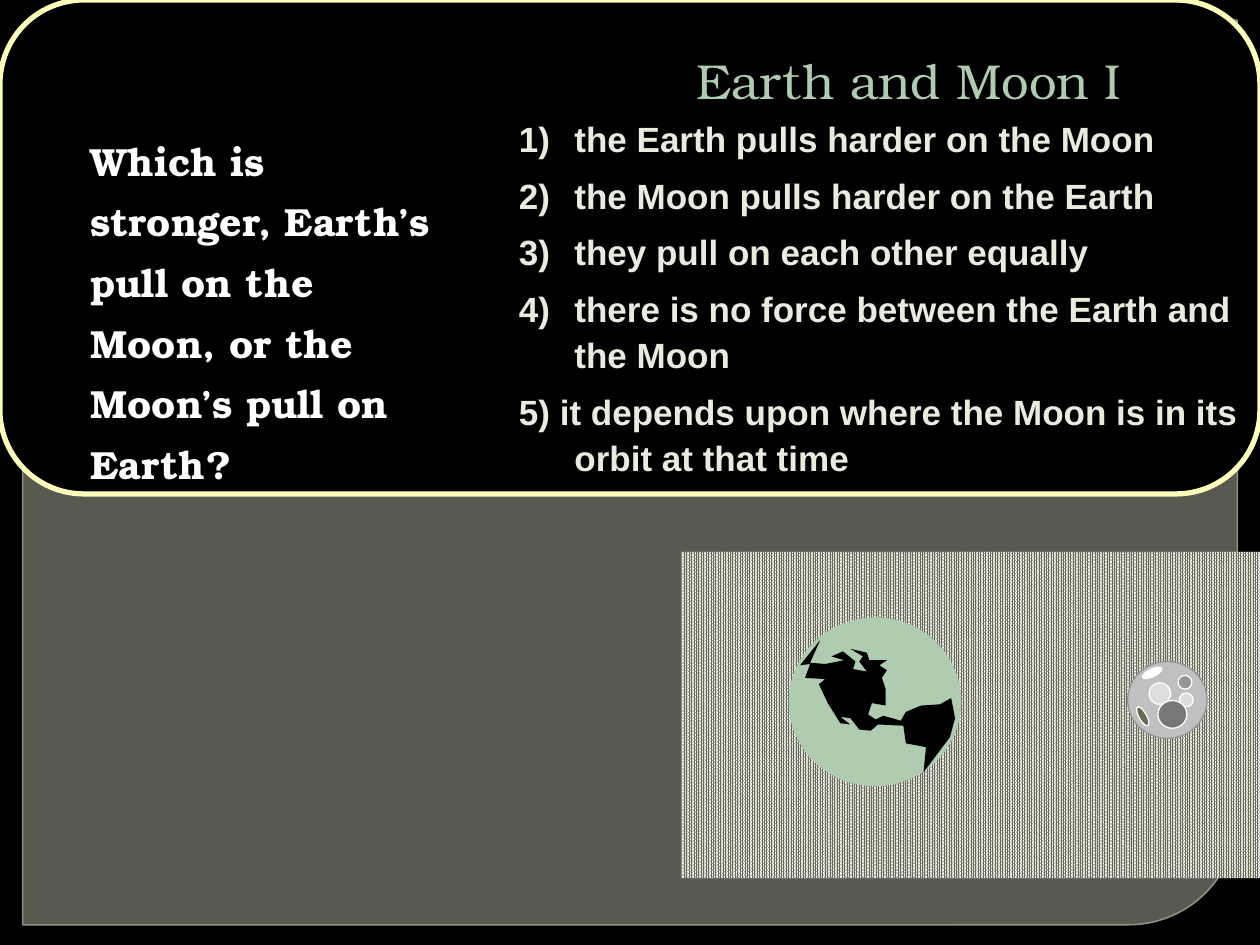
from dataclasses import dataclass

from lxml import etree
from pptx import Presentation
from pptx.dml.color import RGBColor
from pptx.enum.dml import MSO_PATTERN
from pptx.enum.shapes import MSO_SHAPE
from pptx.enum.text import MSO_ANCHOR, MSO_AUTO_SIZE, PP_ALIGN
from pptx.oxml.ns import qn
from pptx.util import Pt

PX = 9144
ELLIPSE = MSO_SHAPE.OVAL
RECTANGLE = MSO_SHAPE.RECTANGLE
ROUNDED = MSO_SHAPE.ROUNDED_RECTANGLE
DIAGONAL = MSO_SHAPE.ROUND_2_DIAG_RECTANGLE
DENSE = MSO_PATTERN.PERCENT_90
LEFT, RIGHT = PP_ALIGN.LEFT, PP_ALIGN.RIGHT
TOP, BOTTOM = MSO_ANCHOR.TOP, MSO_ANCHOR.BOTTOM
NO_FIT = MSO_AUTO_SIZE.NONE

SERIF, SANS = "TeX Gyre Bonum", "Arial"
COLORS = {
    "black": "000000", "white": "FFFFFF", "backdrop": "888B7B",
    "backdrop_edge": "9DA090", "panel_edge": "FCFEB9", "sage": "B0CCB0",
    "cream": "EAEBDE", "olive": "676A55", "moon": "C0C0C0",
    "gray": "969696", "pale": "DDDDDD", "dark": "777777",
}

ANSWERS = [
    "1)\tthe Earth pulls harder on the Moon",
    "2)\tthe Moon pulls harder on the Earth",
    "3)\tthey pull on each other equally",
    "4)\tthere is no force between the Earth and the Moon",
    "5) it depends upon where the Moon is in its orbit at that time",
]

CRATERS = [
    (936, 550, 11, 11, "pale", 0),
    (912, 542, 17, 17, "pale", 0),
    (906, 531, 17, 6, "white", 335),
    (904, 560, 6, 17, "olive", 331),
    (919, 556, 23, 22, "dark", 0),
    (935, 536, 11, 11, "gray", 0),
]

LAND = [
    (651, 508), (643, 526), (655, 527), (670, 524), (660, 521), (669, 517),
    (679, 525), (677, 531), (688, 533), (682, 525), (685, 521), (675, 515),
    (688, 518), (690, 524), (704, 524), (698, 528), (704, 532), (700, 538),
    (703, 547), (703, 560), (692, 558), (689, 567), (695, 571), (701, 568),
    (715, 572), (719, 565), (731, 560), (746, 559), (755, 554), (758, 570),
    (754, 585), (733, 613), (735, 593), (719, 590), (717, 576), (697, 575),
    (691, 580), (682, 579), (675, 570), (667, 569), (675, 575), (667, 574),
    (657, 558), (650, 543), (655, 539), (639, 538), (643, 527), (635, 528),
]


@dataclass
class Board:
    slide: object
    colors: dict

    def color(self, name):
        return RGBColor.from_string(self.colors[name])

    def translucent(self, fill_element, percent):
        alpha = etree.SubElement(fill_element[0], qn("a:alpha"))
        alpha.set("val", str(percent * 1000))

    def paint(self, shape, fill, edge=None, width=0.75):
        shape.shadow.inherit = False
        shape.fill.solid()
        shape.fill.fore_color.rgb = self.color(fill)
        if edge:
            shape.line.color.rgb = self.color(edge)
            shape.line.width = Pt(width)
        else:
            shape.line.fill.background()
        return shape

    def shape(self, kind, box, fill, edge=None, width=0.75, parent=None, turn=0):
        owner = parent or self.slide
        item = owner.shapes.add_shape(kind, *(v * PX for v in box))
        item.rotation = turn
        return self.paint(item, fill, edge, width)

    def outline(self, points, fill, parent):
        builder = parent.shapes.build_freeform(*points[0], scale=PX)
        builder.add_line_segments(points[1:], close=True)
        return self.paint(builder.convert_to_shape(), fill)

    def placeholder(self, item, box, anchor):
        item.element.getparent().append(item.element)
        item.left, item.top, item.width, item.height = (v * PX for v in box)
        return self.frame(item, anchor)

    def textbox(self, box):
        item = self.slide.shapes.add_textbox(*(v * PX for v in box))
        return self.frame(item, TOP)

    def frame(self, item, anchor):
        frame = item.text_frame
        frame.word_wrap = True
        frame.auto_size = NO_FIT
        frame.vertical_anchor = anchor
        return frame

    def paragraph(self, paragraph, text, font, size, color, bold=False,
                  align=LEFT, spacing=1.0, before=0, margin=0, indent=0):
        paragraph.alignment = align
        paragraph.line_spacing = spacing
        paragraph.space_before = Pt(before)
        props = paragraph._p.get_or_add_pPr()
        props.set("marL", str(margin * PX))
        props.set("indent", str(indent * PX))
        etree.SubElement(props, qn("a:buNone"))
        run = paragraph.add_run()
        run.text = text
        run.font.name = font
        run.font.size = Pt(size)
        run.font.bold = bold
        run.font.color.rgb = self.color(color)


def main():
    deck = Presentation()
    deck.slide_width, deck.slide_height = 1000 * PX, 750 * PX
    slide = deck.slides.add_slide(deck.slide_layouts[1])
    board = Board(slide, COLORS)
    slide.background.fill.solid()
    slide.background.fill.fore_color.rgb = board.color("black")

    backdrop = board.shape(DIAGONAL, (18, 16, 964, 718), "backdrop",
                           "backdrop_edge", 0.87)
    backdrop.adjustments[0] = 0.12
    backdrop.adjustments[1] = 0
    properties = backdrop.element.spPr
    board.translucent(properties.find(qn("a:solidFill")), 65)
    board.translucent(properties.find(qn("a:ln")).find(qn("a:solidFill")), 88)
    panel = board.shape(ROUNDED, (0, 0, 1000, 392), "black", "panel_edge", 3)
    panel.adjustments[0] = 0.17

    title = board.placeholder(slide.shapes.title, (102, 0, 798, 92), BOTTOM)
    board.paragraph(title.paragraphs[0], "Earth and Moon I", SERIF, 28, "sage",
                    align=RIGHT, spacing=0.9, margin=6)
    question = board.placeholder(slide.placeholders[1], (18, 93, 334, 265), TOP)
    board.paragraph(question.paragraphs[0],
                    "Which is stronger, Earth’s pull on the Moon, "
                    "or the Moon’s pull on Earth?",
                    SERIF, 22.4, "white", bold=True, spacing=1.29, margin=44)

    answers = board.textbox((402, 85, 598, 306))
    for number, answer in enumerate(ANSWERS):
        line = answers.add_paragraph() if number else answers.paragraphs[0]
        board.paragraph(line, answer, SANS, 20, "cream", bold=True,
                        spacing=1.1, before=6, margin=44, indent=-44)

    scene = slide.shapes.add_group_shape()
    sky = board.shape(RECTANGLE, (541, 438, 459, 259), "olive", parent=scene)
    sky.fill.patterned()
    sky.fill.pattern = DENSE
    sky.fill.fore_color.rgb = board.color("olive")
    sky.fill.back_color.rgb = board.color("white")
    board.shape(ELLIPSE, (626, 490, 137, 134), "sage", parent=scene)
    board.outline(LAND, "black", scene)
    board.shape(ELLIPSE, (895, 525, 63, 61), "moon", "gray", parent=scene)
    for *box, fill, turn in CRATERS:
        board.shape(ELLIPSE, box, fill, "white", parent=scene, turn=turn)

    deck.save("out.pptx")


if __name__ == "__main__":
    main()
